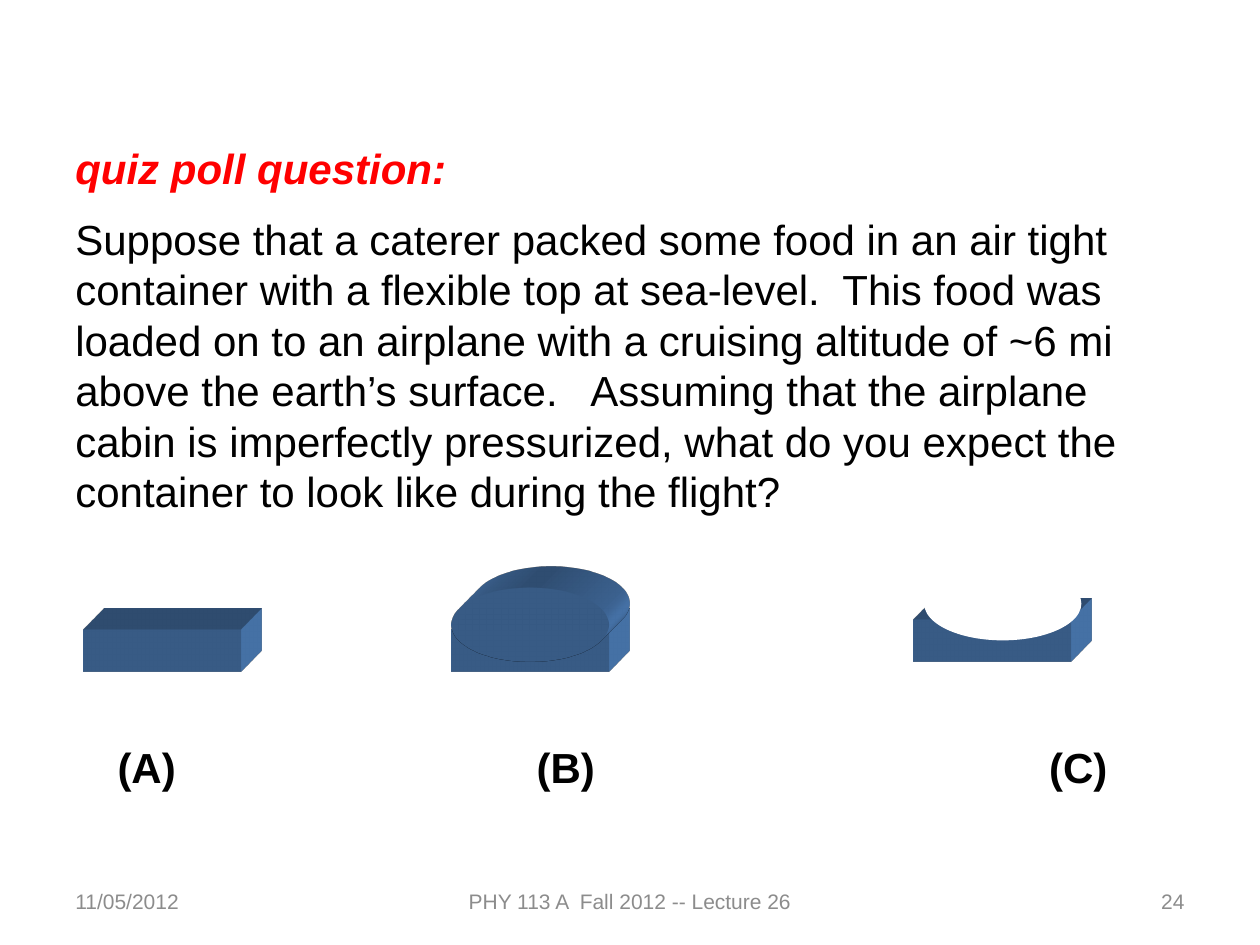
from lxml import etree
from pptx import Presentation, util as u
from pptx.dml.color import RGBColor
from pptx.enum import shapes, text
from pptx.oxml import parse_xml
from pptx.oxml.ns import nsdecls, qn

COLORS = {"black": "000000", "red": "FF0000", "gray": "8C8C8C",
          "blue": "4F81BD", "white": "FFFFFF"}
FONT = "Arial"
LEFT, CENTER, RIGHT = text.PP_ALIGN.LEFT, text.PP_ALIGN.CENTER, text.PP_ALIGN.RIGHT
RECTANGLE, OVAL = shapes.MSO_SHAPE.RECTANGLE, shapes.MSO_SHAPE.OVAL

HEADING = "quiz poll question:"
QUESTION = (
    "Suppose that a caterer packed some food in an air tight container with a "
    "flexible top at sea-level.  This food was loaded on to an airplane with a "
    "cruising altitude of ~6 mi above the earth’s surface.   Assuming that the "
    "airplane cabin is imperfectly pressurized, what do you expect the "
    "container to look like during the flight?")
CHOICES = ["(A)", "(B)", "(C)"]
CHOICE_TABS = [8.45, 18.78]
FOOTERS = [
    ("11/05/2012", 1.27, 5.93, LEFT),
    ("PHY 113 A  Fall 2012 -- Lecture 26", 8.68, 8.04, CENTER),
    ("24", 18.2, 5.93, RIGHT),
]
CONTAINER_WIDTH, BOX_HEIGHT, LID_HEIGHT = 3.17, 0.84, 1.48
CONTAINERS = [
    (RECTANGLE, 1.69, 12.7, BOX_HEIGHT, "blue"),
    (RECTANGLE, 9.1, 12.7, BOX_HEIGHT, "blue"),
    (RECTANGLE, 18.42, 12.49, BOX_HEIGHT, "blue"),
    (OVAL, 9.1, 11.85, LID_HEIGHT, "blue"),
    (OVAL, 18.63, 11.43, LID_HEIGHT, "white"),
]


def color(name):
    return RGBColor.from_string(COLORS[name])


def add_text(slide, box, lines, size, anchor=text.MSO_ANCHOR.TOP,
             alignment=LEFT, before=0):
    frame = slide.shapes.add_textbox(*map(u.Cm, box)).text_frame
    frame.word_wrap = True
    frame.vertical_anchor = anchor
    for index, (words, tint, bold, italic) in enumerate(lines):
        paragraph = frame.add_paragraph() if index else frame.paragraphs[0]
        paragraph.text = words
        paragraph.alignment = alignment
        paragraph.space_before = u.Pt(before)
        font = paragraph.font
        font.name, font.size = FONT, u.Pt(size)
        font.bold, font.italic = bold, italic
        font.color.rgb = color(tint)
    return frame


def add_tabs(paragraph, stops):
    properties = paragraph._p.get_or_add_pPr()
    tabs = etree.Element(qn("a:tabLst"))
    for stop in stops:
        etree.SubElement(tabs, qn("a:tab"), pos=str(u.Cm(stop)), algn="l")
    properties.find(qn("a:defRPr")).addprevious(tabs)


def extrude(shape, tint):
    properties = shape._element.spPr
    properties.append(parse_xml(
        f'<a:scene3d {nsdecls("a")}><a:camera prst="legacyObliqueTopRight"/>'
        '<a:lightRig rig="legacyFlat3" dir="b"/></a:scene3d>'))
    properties.append(parse_xml(
        f'<a:sp3d {nsdecls("a")} extrusionH="430200" prstMaterial="legacyMatte">'
        '<a:bevelT w="13500" h="13500" prst="angle"/>'
        '<a:bevelB w="13500" h="13500" prst="angle"/>'
        f'<a:extrusionClr><a:srgbClr val="{COLORS[tint]}"/></a:extrusionClr>'
        '</a:sp3d>'))


def add_container(slide, kind, left, top, height, tint):
    shape = slide.shapes.add_shape(
        kind, *map(u.Cm, (left, top, CONTAINER_WIDTH, height)))
    shape.shadow.inherit = False
    shape.fill.solid()
    shape.fill.fore_color.rgb = color(tint)
    shape.line.fill.background()
    if tint == "blue":
        extrude(shape, tint)


def main():
    presentation = Presentation()
    presentation.slide_width, presentation.slide_height = u.Cm(25.4), u.Cm(19.05)
    slide = presentation.slides.add_slide(presentation.slide_layouts[6])

    for words, left, width, alignment in FOOTERS:
        add_text(slide, (left, 17.65, width, 1.02),
                 [(words, "gray", False, False)], 12,
                 text.MSO_ANCHOR.MIDDLE, alignment)
    add_text(slide, (1.27, 2.74, 22.86, 7.95),
             [(HEADING, "red", True, True), (QUESTION, "black", False, False)],
             24, before=12)
    for container in CONTAINERS:
        add_container(slide, *container)
    choices = add_text(slide, (2.12, 14.82, 20.52, 1.27),
                       [("\t".join(CHOICES), "black", True, False)], 24, before=12)
    add_tabs(choices.paragraphs[0], CHOICE_TABS)

    presentation.save("out.pptx")


if __name__ == "__main__":
    main()
